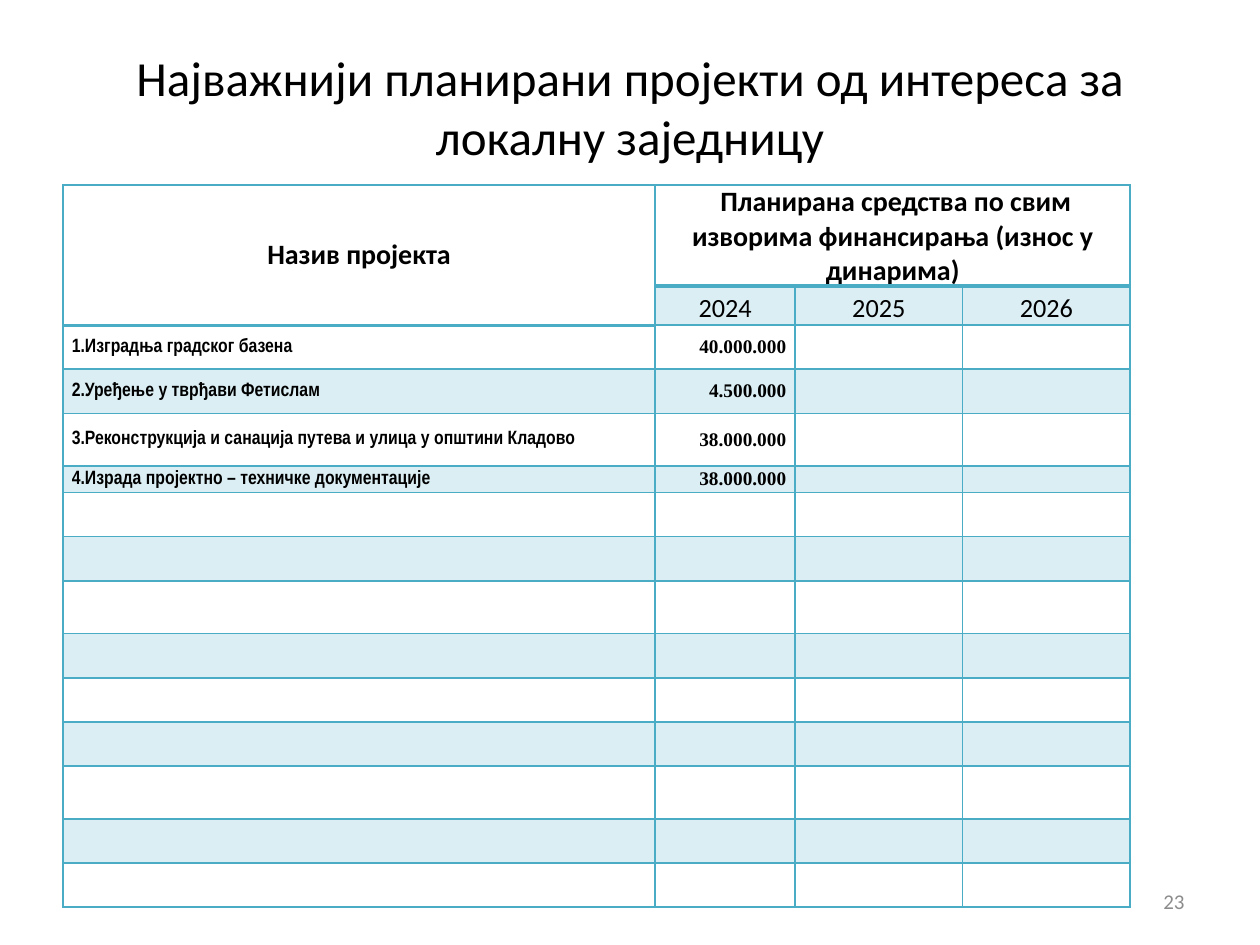
import dataclasses

import lxml.etree
import pptx
import pptx.dml.color
import pptx.enum.text
import pptx.oxml.ns
import pptx.util

ALIGN = pptx.enum.text.PP_ALIGN
ANCHOR = pptx.enum.text.MSO_ANCHOR
qn = pptx.oxml.ns.qn


@dataclasses.dataclass(frozen=True)
class Theme:
    ink: str = "000000"
    muted: str = "8C8C8C"
    accent: str = "4BACC6"
    band_percent: int = 20
    main_font: str = "Calibri"
    name_font: str = "Arial Narrow"
    amount_font: str = "Times New Roman"
    title_size: int = 28
    head_size: int = 16
    year_size: int = 15
    row_size: int = 11
    number_size: int = 12
    thin: int = 1
    thick: int = 2


class SlideBuilder:
    """Holds the theme and the current page; places are shares of the slide."""

    def __init__(self, deck, theme):
        self.deck = deck
        self.theme = theme
        self.page = deck.slides.add_slide(deck.slide_layouts[5])

    def area(self, left, top, width, height):
        wide, high = self.deck.slide_width, self.deck.slide_height
        return [int(share * side) for share, side in
                zip((left, top, width, height), (wide, high, wide, high))]

    def add_text(self, frame, text, size, font=None, color=None, bold=False, align=ALIGN.CENTER):
        para = frame.paragraphs[0]
        para.alignment = align
        span = para.add_run()
        span.text = text
        span.font.size = pptx.util.Pt(size)
        span.font.name = font or self.theme.main_font
        span.font.bold = bold
        span.font.color.rgb = pptx.dml.color.RGBColor.from_string(color or self.theme.ink)

    def title(self, place, text):
        box = self.page.shapes.title
        box.left, box.top, box.width, box.height = self.area(*place)
        box.text_frame.vertical_anchor = ANCHOR.MIDDLE
        self.add_text(box.text_frame, text, self.theme.title_size)

    def page_number(self, place, text):
        frame = self.page.shapes.add_textbox(*self.area(*place)).text_frame
        frame.word_wrap = True
        frame.vertical_anchor = ANCHOR.MIDDLE
        self.add_text(frame, text, self.theme.number_size, color=self.theme.muted,
                      align=ALIGN.RIGHT)

    def table(self, place, columns, rows):
        frame = self.page.shapes.add_table(len(rows), len(columns), *self.area(*place))
        table = frame.table
        table.first_row = table.horz_banding = False
        for column, width in zip(table.columns, columns):
            column.width = pptx.util.Inches(width)
        for row, height in zip(table.rows, rows):
            row.height = pptx.util.Inches(height)
        return table

    def cell(self, cell, banded, widths, anchor=ANCHOR.MIDDLE):
        cell.margin_left = cell.margin_right = pptx.util.Inches(0.07)
        cell.margin_top = cell.margin_bottom = 0
        cell.vertical_anchor = anchor
        if banded:
            cell.fill.solid()
            cell.fill.fore_color.rgb = pptx.dml.color.RGBColor.from_string(self.theme.accent)
        else:
            cell.fill.background()
        properties = cell._tc.get_or_add_tcPr()
        for color in properties.findall(".//" + qn("a:srgbClr")):
            lxml.etree.SubElement(color, qn("a:alpha"), val=str(self.theme.band_percent * 1000))
        # Borders come before the fill, in schema order
        for index, (side, width) in enumerate(zip("LRTB", widths)):
            line = lxml.etree.Element(qn("a:ln" + side), w=str(pptx.util.Pt(width)))
            fill = lxml.etree.SubElement(line, qn("a:solidFill"))
            lxml.etree.SubElement(fill, qn("a:srgbClr"), val=self.theme.accent)
            properties.insert(index, line)
        # Keeps an empty cell from stretching its row
        lxml.etree.SubElement(cell.text_frame.paragraphs[0]._p, qn("a:endParaRPr"),
                              sz=str(self.theme.row_size * 100))


COLUMNS = [4.7, 1.11, 1.33, 1.33]
ROWS = [0.57, 0.31, 0.35, 0.35, 0.42, 0.21] + [0.35, 0.35, 0.42, 0.35] * 2 + [0.35]
YEARS = ["2024", "2025", "2026"]
PROJECTS = [
    ("1.Изградња градског базена", "40.000.000"),
    ("2.Уређење у тврђави Фетислам", "4.500.000"),
    ("3.Реконструкција и санација путева и улица у општини Кладово", "38.000.000"),
    ("4.Израда пројектно – техничке документације", "38.000.000"),
]


def project_table(builder):
    theme = builder.theme
    table = builder.table((0.05, 0.196, 0.848, 0.763), COLUMNS, ROWS)

    # Bands and borders, with a thick rule under each heading
    for row in range(len(ROWS)):
        for column in range(len(COLUMNS)):
            head_end = 1 if column == 0 else 0
            top = theme.thick if row == head_end + 1 else theme.thin
            bottom = theme.thick if row == head_end else theme.thin
            banded = row % 2 == 1 and (row, column) != (1, 0)
            low = row < 2 and column > 0
            builder.cell(table.cell(row, column), banded, (theme.thin, theme.thin, top, bottom),
                         ANCHOR.BOTTOM if low else ANCHOR.MIDDLE)

    # Headings
    table.cell(0, 0).merge(table.cell(1, 0))
    table.cell(0, 1).merge(table.cell(0, 3))
    headings = ["Назив пројекта", " Планирана средства по свим изворима финансирања (износ у динарима)"]
    for column, text in enumerate(headings):
        builder.add_text(table.cell(0, column).text_frame, text, theme.head_size, bold=True)
    for column, year in enumerate(YEARS, start=1):
        builder.add_text(table.cell(1, column).text_frame, year, theme.year_size)

    # Projects
    for row, (name, amount) in enumerate(PROJECTS, start=2):
        builder.add_text(table.cell(row, 0).text_frame, name, theme.row_size, theme.name_font,
                         bold=True, align=ALIGN.LEFT)
        builder.add_text(table.cell(row, 1).text_frame, amount, theme.row_size, theme.amount_font,
                         bold=True, align=ALIGN.RIGHT)


def main():
    deck = pptx.Presentation()
    deck.slide_width = pptx.util.Inches(10)
    deck.slide_height = pptx.util.Inches(7.5)
    builder = SlideBuilder(deck, Theme())
    builder.title((0.05, 0.04, 0.9, 0.145),
                  "Најважнији планирани пројекти од интереса за локалну заједницу")
    builder.page_number((0.717, 0.927, 0.233, 0.053), "23")
    project_table(builder)
    deck.save("out.pptx")


if __name__ == "__main__":
    main()
